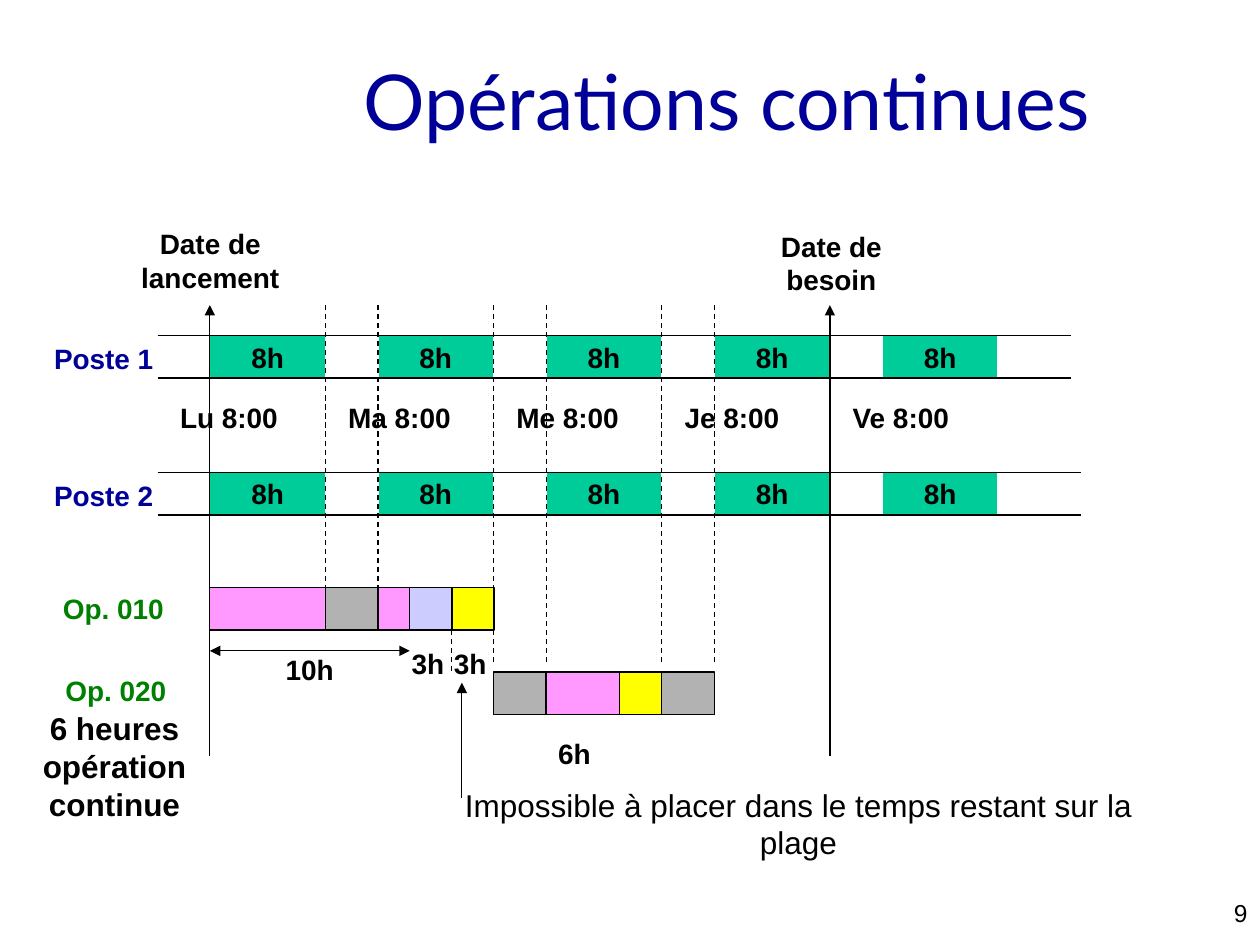
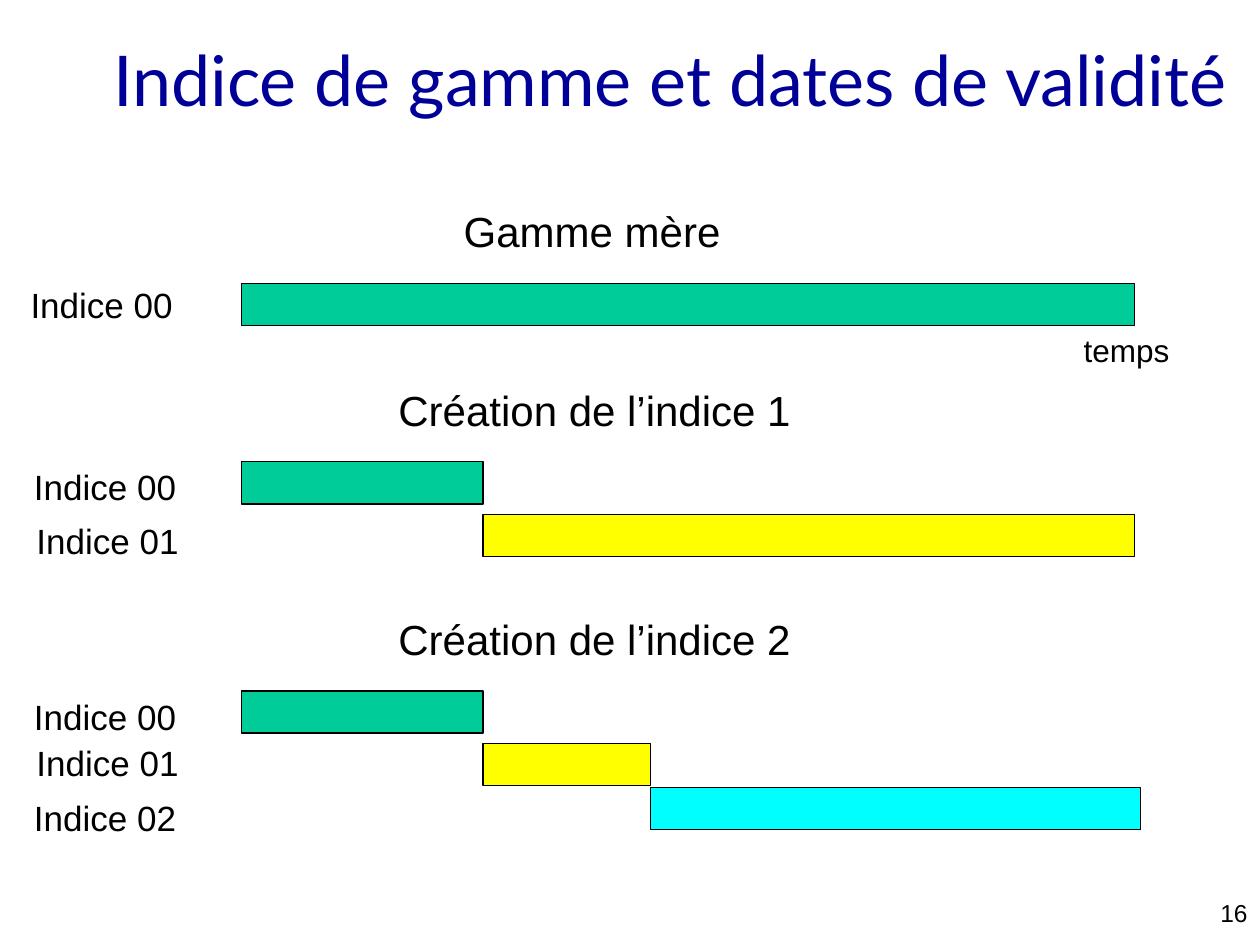
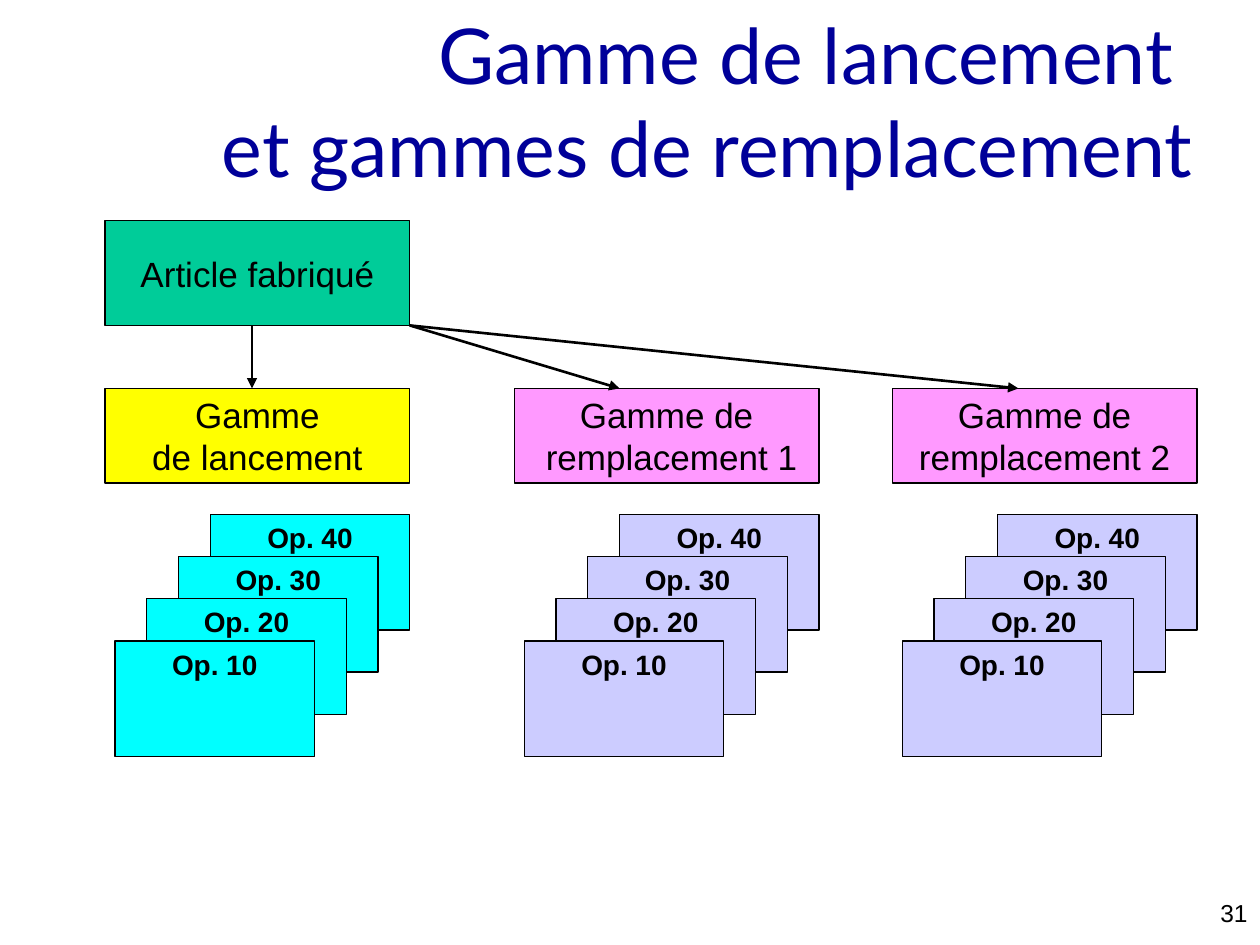
from lxml import etree
from pptx import Presentation
from pptx.dml.color import RGBColor
from pptx.enum import dml, shapes, text
from pptx.oxml import ns
from pptx.util import Cm, Pt

NAVY = RGBColor(0x00, 0x00, 0x99)
BLACK = RGBColor(0x00, 0x00, 0x00)
WHITE = RGBColor(0xFF, 0xFF, 0xFF)
TEAL = RGBColor(0x00, 0xCC, 0x99)
GREEN = RGBColor(0x00, 0x80, 0x00)
PINK = RGBColor(0xFF, 0x99, 0xFF)
GREY = RGBColor(0xB2, 0xB2, 0xB2)
LILAC = RGBColor(0xCC, 0xCC, 0xFF)
YELLOW = RGBColor(0xFF, 0xFF, 0x00)
CYAN = RGBColor(0x00, 0xFF, 0xFF)

LEFT, MID, RIGHT = text.PP_ALIGN.LEFT, text.PP_ALIGN.CENTER, text.PP_ALIGN.RIGHT
TOP, CENTRE = text.MSO_ANCHOR.TOP, text.MSO_ANCHOR.MIDDLE
BAR = 0.85  # height of every bar, cm
ARROW = ("tailEnd",)


class Deck:
    """Shared style and the slide being filled; all lengths in cm."""

    def __init__(self):
        self.prs = Presentation()
        self.prs.slide_width, self.prs.slide_height = Cm(25.4), Cm(19.05)
        self.slide = None

    def page(self, title, number, box, size=44):
        self.slide = self.prs.slides.add_slide(self.prs.slide_layouts[6])
        self.label(20.12, 17.98, 5.28, str(number), 14, align=RIGHT,
                   high=0.64, wrap=True)
        left, top, wide = box
        self.label(left, top, wide, title, size, NAVY, align=RIGHT, high=3.18,
                   anchor=CENTRE, wrap=True, font="Lato")

    def words(self, frame, paras, size, color, bold, align, anchor, wrap, font):
        """Each item of paras is a paragraph; a newline in it is a line break."""
        frame.word_wrap, frame.vertical_anchor = wrap, anchor
        for i, para in enumerate([paras] if isinstance(paras, str) else paras):
            p = frame.paragraphs[0] if i == 0 else frame.add_paragraph()
            p.alignment = align
            for j, part in enumerate(para.split("\n")):
                if j:
                    p.add_line_break()
                run = p.add_run()
                run.text = part
                run.font.name, run.font.size = font, Pt(size)
                run.font.bold, run.font.color.rgb = bold, color

    def label(self, x, y, wide, paras, size=16, color=BLACK, bold=False,
              align=MID, high=0.94, anchor=TOP, wrap=False, font="Arial"):
        box = self.slide.shapes.add_textbox(Cm(x), Cm(y), Cm(wide), Cm(high))
        self.words(box.text_frame, paras, size, color, bold, align, anchor,
                   wrap, font)

    def rect(self, x, y, wide, high, fill, paras="", size=16, bold=False,
             edge=BLACK, anchor=CENTRE):
        box = self.slide.shapes.add_shape(
            shapes.MSO_SHAPE.RECTANGLE, Cm(x), Cm(y), Cm(wide), Cm(high))
        box.shadow.inherit = False
        box.fill.solid()
        box.fill.fore_color.rgb = fill
        box.line.color.rgb, box.line.width = edge, Pt(0.75)
        if paras:
            self.words(box.text_frame, paras, size, BLACK, bold, MID, anchor,
                       False, "Arial")

    def line(self, x1, y1, x2, y2, width=0.75, dash=False, ends=()):
        """ends names the arrowheads: headEnd at the start, tailEnd at the end."""
        link = self.slide.shapes.add_connector(
            shapes.MSO_CONNECTOR.STRAIGHT, Cm(x1), Cm(y1), Cm(x2), Cm(y2))
        link.line.color.rgb, link.line.width = BLACK, Pt(width)
        if dash:
            link.line.dash_style = dml.MSO_LINE.DASH
        stroke = link.get_or_add_ln()
        for end in ends:
            etree.SubElement(stroke, ns.qn("a:" + end), type="triangle")
        etree.SubElement(link.element.spPr, ns.qn("a:effectLst"))


def planning(deck):
    deck.page("Opérations continues", 9, (0.64, 0.43, 21.59))
    start, day, shift, night = 4.23, 3.39, 2.33, 1.06
    days = [start + day * i for i in range(5)]

    # Work stations with their shifts
    for name, y, end in (("Poste 1", 6.77, 21.59), ("Poste 2", 9.53, 21.8)):
        for x in days:
            deck.rect(x, y, shift, BAR, TEAL, "8h", bold=True, edge=WHITE)
        for edge in (y, y + BAR):
            deck.line(3.18, edge, end, edge)
        deck.label(0.84, y, 2.51, name, color=NAVY, bold=True, align=LEFT)
    for x, name, wide in zip(days, ("Lu", "Ma", "Me", "Je", "Ve"),
                             (2.49, 2.59, 2.59, 2.41, 2.49)):
        deck.label(x - 0.85, 7.95, wide, name + " 8:00", bold=True, align=LEFT)

    # Operations: consecutive segments
    ops = ((start, 11.85, ((shift, PINK), (night, GREY), (0.64, PINK),
                           (BAR, LILAC), (BAR, YELLOW))),
           (days[1] + shift, 13.55, ((night, GREY), (1.48, PINK),
                                     (BAR, YELLOW), (night, GREY))))
    for x, y, parts in ops:
        for wide, fill in parts:
            deck.rect(x, y, wide, BAR, fill)
            x += wide

    # Shift limits
    for i, foot in enumerate((11.85, 13.34, 13.34)):
        for x in (days[i] + shift, days[i + 1]):
            deck.line(x, 6.15, x, foot, dash=True)
    deck.line(9.1, 12.7, 9.1, 13.55, dash=True)

    # Start and due dates
    for x, left, top, wide, word in (
            (start, 2.59, 4.45, 3.3, "lancement"),
            (days[3] + shift, 15.49, 4.5, 2.54, "besoin")):
        deck.line(x, 15.24, x, 6.15, ends=ARROW)
        deck.label(left, top, wide, ("Date de", word), bold=True, high=1.63)

    # Durations and remarks
    deck.line(start, 13.12, 8.26, 13.12, ends=("headEnd", "tailEnd"))
    for x, y, wide, name, color in (
            (1.02, 11.81, 2.57, "Op. 010", GREEN),
            (1.07, 13.46, 2.57, "Op. 020", GREEN),
            (5.51, 13.03, 1.47, "10h", BLACK),
            (8.05, 12.9, 1.17, "3h", BLACK),
            (8.9, 12.9, 1.17, "3h", BLACK),
            (11, 14.73, 1.17, "6h", BLACK)):
        deck.label(x, y, wide, name, color=color, bold=True, align=LEFT)
    deck.label(0.61, 14.17, 3.4, ("6 heures", "opération", "continue"), 18,
               bold=True, high=2.54, anchor=CENTRE)
    deck.line(9.31, 16.09, 9.31, 13.76, ends=ARROW)
    deck.label(8.26, 16.09, 15.67,
               "Impossible à placer dans le temps restant sur la plage", 18,
               high=1.02, anchor=CENTRE)


def indices(deck):
    deck.page("Indice de gamme et dates de validité", 16, (0, 0, 24.97), 40)

    # Headings
    for x, y, wide, name in ((9.09, 4.01, 5.69, "Gamme mère"),
                             (7.77, 7.62, 8.43, "Création de l’indice 1"),
                             (7.77, 12.24, 8.43, "Création de l’indice 2")):
        deck.label(x, y, wide, name, 24, high=1.27, anchor=CENTRE)

    # Label place, index, then bar place and width
    first, second, third = 4.87, 9.74, 13.12
    for x, y, index, left, top, wide in (
            (0.36, 5.59, 0, first, 5.72, 18),
            (0.43, 9.27, 0, first, 9.31, 4.87),
            (0.48, 10.36, 1, second, 10.37, 13.13),
            (0.43, 13.89, 0, first, 13.93, 4.87),
            (0.48, 14.82, 1, second, 14.99, 3.38),
            (0.43, 15.93, 2, third, 15.88, 9.88)):
        deck.label(x, y, 3.38, f"Indice {index:02}", 20, high=1.09,
                   anchor=CENTRE)
        deck.rect(left, top, wide, BAR, (TEAL, YELLOW, CYAN)[index])
    deck.label(21.59, 6.55, 2.24, "temps", 18, high=1.02, anchor=CENTRE)


def routings(deck):
    deck.page("Gamme de lancement \net gammes de remplacement", 31,
              (0, 0.43, 24.31))
    wide = 6.14
    deck.rect(2.12, 4.45, wide, 2.11, TEAL, "Article fabriqué", 20)

    # One routing per column, with its stack of operations
    for x, name, fill, tint in (
            (2.12, "Gamme\nde lancement", YELLOW, CYAN),
            (10.37, ("Gamme de", " remplacement 1"), PINK, LILAC),
            (17.99, "Gamme de\nremplacement 2", PINK, LILAC)):
        deck.rect(x, 7.83, wide, 1.91, fill, name, 20)
        for i in range(4):
            deck.rect(x + 2.12 - 0.64 * i, 10.37 + 0.85 * i, 4.02, 2.33, tint,
                      f"Op. {40 - 10 * i}", bold=True, anchor=TOP)

    # Links from the article
    for x1, x2 in ((5.08, 5.08), (8.26, 12.49), (8.26, 20.53)):
        deck.line(x1, 6.56, x2, 7.83, 1.5, ends=ARROW)


def main():
    deck = Deck()
    for build in (planning, indices, routings):
        build(deck)
    deck.prs.save("out.pptx")


if __name__ == "__main__":
    main()
